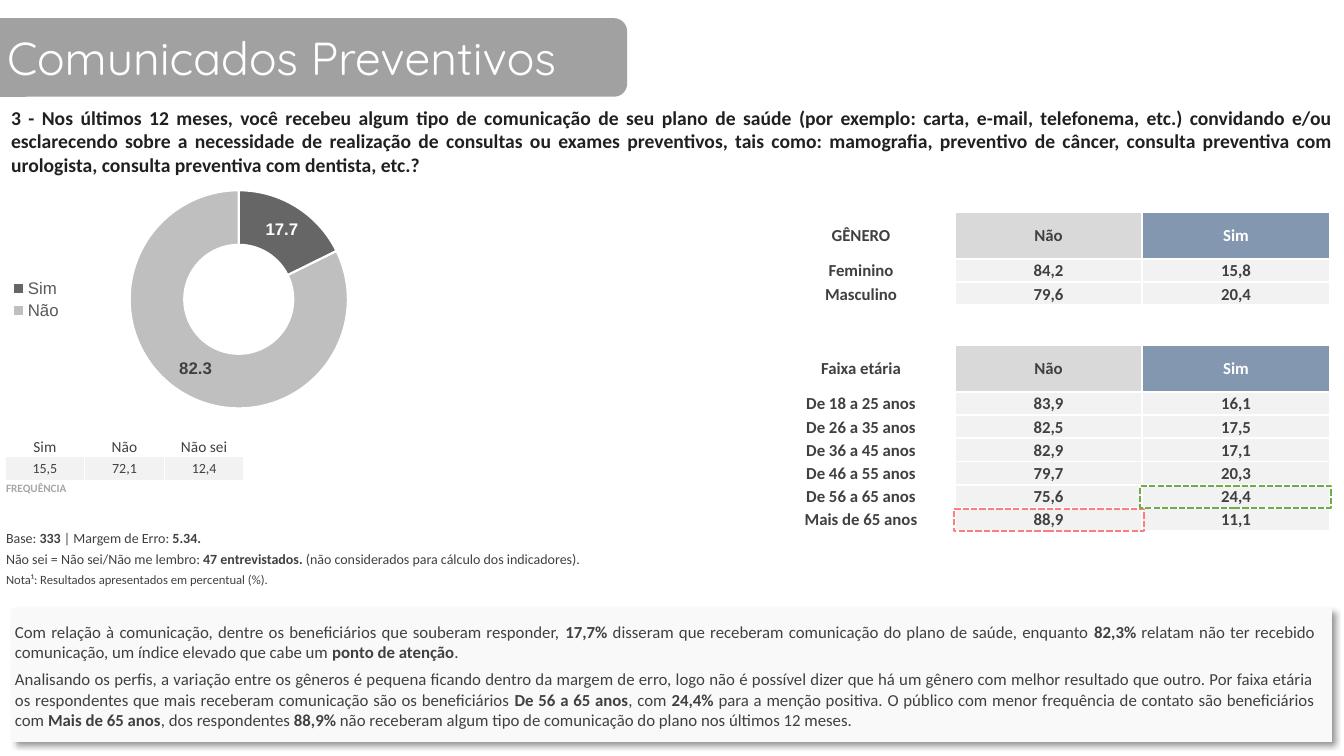
from lxml import etree
from pptx import Presentation
from pptx.chart.data import CategoryChartData
from pptx.dml.color import RGBColor
from pptx.enum.chart import XL_CHART_TYPE, XL_LEGEND_POSITION
from pptx.enum.dml import MSO_LINE
from pptx.enum.shapes import MSO_SHAPE
from pptx.enum.text import MSO_ANCHOR, MSO_AUTO_SIZE, PP_ALIGN
from pptx.oxml import parse_xml
from pptx.oxml.ns import qn
from pptx.util import Pt

LEFT, MID, FULL = PP_ALIGN.LEFT, PP_ALIGN.CENTER, PP_ALIGN.JUSTIFY
TOP, CENTER, BOTTOM = MSO_ANCHOR.TOP, MSO_ANCHOR.MIDDLE, MSO_ANCHOR.BOTTOM
RECT, ROUND = MSO_SHAPE.RECTANGLE, MSO_SHAPE.ROUNDED_RECTANGLE
DASH = MSO_LINE.SQUARE_DOT
RING, KEY_LEFT = XL_CHART_TYPE.DOUGHNUT, XL_LEGEND_POSITION.LEFT
NO_FIT = MSO_AUTO_SIZE.NONE

WHITE = RGBColor(0xFF, 0xFF, 0xFF)
PANEL = RGBColor(0xF9, 0xF9, 0xF9)
PALE = RGBColor(0xF2, 0xF2, 0xF2)
LIGHT = RGBColor(0xD9, 0xD9, 0xD9)
SILVER = RGBColor(0xBF, 0xBF, 0xBF)
FAINT = RGBColor(0xA6, 0xA6, 0xA6)
BANNER = RGBColor(0xA1, 0xA1, 0xA1)
GREY = RGBColor(0x66, 0x66, 0x66)
KEY = RGBColor(0x59, 0x59, 0x59)
TEXT = RGBColor(0x40, 0x40, 0x40)
DARK = RGBColor(0x20, 0x20, 0x20)
BLUE = RGBColor(0x84, 0x97, 0xB0)
RED = RGBColor(0xFF, 0x7C, 0x80)
GREEN = RGBColor(0x70, 0xAD, 0x47)

A = 'xmlns:a="http://schemas.openxmlformats.org/drawingml/2006/main"'
C = 'xmlns:c="http://schemas.openxmlformats.org/drawingml/2006/chart"'
SCALE = 9144  # 100 px to the inch


def px(*vals):
    return [v * SCALE for v in vals]


def style(font, size, color, face, bold=False):
    font.size, font.name, font.bold = Pt(size), face, bold
    font.color.rgb = color


def write(frame, text, size=12, color=TEXT, face="Calibri", bold=False, align=LEFT, gap=0):
    """One paragraph per line; ** switches bold on and off."""
    for i, line in enumerate(text.split("\n")):
        para = frame.add_paragraph() if i else frame.paragraphs[0]
        para.alignment = align
        if i and gap:
            para.space_before = Pt(gap)
        for j, part in enumerate(line.split("**")):
            if part:
                run = para.add_run()
                run.text = part
                style(run.font, size, color, face, bold or j % 2 == 1)


class Page:
    def __init__(self, deck):
        self.slide = deck.slides.add_slide(deck.slide_layouts[5])
        self.shapes = self.slide.shapes

    def title(self, text, *box):
        head = self.shapes.title
        head.left, head.top, head.width, head.height = px(*box)
        head.text_frame.auto_size = NO_FIT
        head.text_frame.vertical_anchor = CENTER
        write(head.text_frame, text, size=33, color=WHITE, face="Quicksand")
        self.shapes._spTree.append(head._element)

    def block(self, *box, kind=RECT, fill=None, line=None, shade=False):
        shape = self.shapes.add_shape(kind, *px(*box))
        shape.shadow.inherit = False
        if fill is None:
            shape.fill.background()
        else:
            shape.fill.solid()
            shape.fill.fore_color.rgb = fill
        if line is None:
            shape.line.fill.background()
        else:
            shape.line.color.rgb = line
            shape.line.width = Pt(1.5)
            shape.line.dash_style = DASH
        if shade:
            list_ = shape._element.spPr.find(qn("a:effectLst"))
            list_.append(parse_xml(
                f'<a:outerShdw {A} blurRad="50800" dist="38100" dir="2700000" algn="tl" '
                'rotWithShape="0"><a:srgbClr val="000000"><a:alpha val="40000"/>'
                '</a:srgbClr></a:outerShdw>'))

    def label(self, text, *box, pad=(10, 5), **look):
        frame = self.shapes.add_textbox(*px(*box)).text_frame
        frame.word_wrap = True
        frame.margin_left = frame.margin_right = pad[0] * SCALE
        frame.margin_top = frame.margin_bottom = pad[1] * SCALE
        write(frame, text, **look)

    def table(self, left, top, cols, highs, rows, look, edge=0):
        """look(row, col) gives a cell's fill, anchor and text format."""
        table = self.shapes.add_table(
            len(rows), len(cols), *px(left, top, sum(cols), sum(highs))).table
        table.first_row = table.horz_banding = False
        for col, wide in zip(table.columns, cols):
            col.width = wide * SCALE
        for r, row in enumerate(rows):
            table.rows[r].height = highs[r] * SCALE
            for c in range(len(cols)):
                fill, anchor, form = look(r, c)
                self.cell(table.cell(r, c), fill, anchor, edge)
                if c < len(row):
                    write(table.cell(r, c).text_frame, row[c], **form)
            if len(row) < len(cols):
                table.cell(r, 0).merge(table.cell(r, len(cols) - 1))

    def cell(self, cell, fill, anchor, edge):
        cell.margin_left = cell.margin_right = cell.margin_top = SCALE
        cell.margin_bottom = 0
        cell.vertical_anchor = anchor
        props = cell._tc.get_or_add_tcPr()
        for side in ("lnL", "lnR", "lnT", "lnB"):
            line = etree.SubElement(props, qn("a:" + side), w=str(int(edge * 12700)))
            paint = etree.SubElement(line, qn("a:solidFill" if edge else "a:noFill"))
            if edge:
                etree.SubElement(paint, qn("a:srgbClr"), val=str(WHITE))
        if fill is None:
            cell.fill.background()
        else:
            cell.fill.solid()
            cell.fill.fore_color.rgb = fill

    def ring(self, names, vals, fills, inks, *box):
        data = CategoryChartData(number_format="0.0")
        data.categories = names
        data.add_series("Series 1", vals)
        chart = self.shapes.add_chart(RING, *px(*box), data).chart
        style(chart.font, 10, TEXT, "Arial")
        chart.has_title = False
        chart.has_legend = True
        chart.legend.position = KEY_LEFT
        chart.legend.include_in_layout = False
        style(chart.legend.font, 12, KEY, "Arial")
        plot = chart.plots[0]
        plot.vary_by_categories = True
        plot.has_data_labels = True
        tags = plot.data_labels
        tags.show_value, tags.show_percentage = True, False
        tags.number_format, tags.number_format_is_linked = "0.0", False
        style(tags.font, 12, WHITE, "Arial", True)
        for i, (fill, ink) in enumerate(zip(fills, inks)):
            point = plot.series[0].points[i]
            point.format.fill.solid()
            point.format.fill.fore_color.rgb = fill
            point.format.line.color.rgb = WHITE
            point.format.line.width = Pt(1.5)
            style(point.data_label.font, 12, ink, "Arial", True)
        # Fixed place of the ring inside the chart
        area = chart._chartSpace.chart.plotArea
        for old in area.findall(qn("c:layout")):
            area.remove(old)
        spots = "".join(f'<c:{k} val="{v}"/>' for k, v in (
            ("layoutTarget", "inner"), ("xMode", "edge"), ("yMode", "edge"),
            ("x", 0.31), ("y", 0.06), ("w", 0.53), ("h", 0.88)))
        area.insert(0, parse_xml(
            f'<c:layout {C}><c:manualLayout>{spots}</c:manualLayout></c:layout>'))


def note_look(r, c):
    return None, TOP, dict(size=9 if r == 2 else 10)


def freq_look(r, c):
    if r == 2:
        return None, TOP, dict(size=8, color=FAINT, bold=True)
    return (PALE if r else None), (CENTER if r else BOTTOM), dict(size=10 if r else 11, align=MID)


def group_look(r, c):
    head = r in (0, 4)
    fill = None if c == 0 or r == 3 else (LIGHT, BLUE)[c - 1] if head else PALE
    return fill, CENTER, dict(bold=True, align=MID, color=WHITE if head and c == 2 else TEXT)


def main():
    deck = Presentation()
    deck.slide_width, deck.slide_height = px(1333, 750)
    page = Page(deck)

    # Banner and question
    page.block(-27, 18, 649, 78, kind=ROUND, fill=BANNER)
    page.title("Comunicados Preventivos", -3, 18, 614, 78)
    page.label("3 - Nos últimos 12 meses, você recebeu algum tipo de comunicação de seu plano de saúde (por exemplo: carta, e-mail, telefonema, etc.) convidando e/ou esclarecendo sobre a necessidade de realização de consultas ou exames preventivos, tais como: mamografia, preventivo de câncer, consulta preventiva com urologista, consulta preventiva com dentista, etc.?",
               0, 99, 1333, 82, pad=(11, 6), size=14, color=DARK, bold=True, align=FULL)

    # Sample notes
    page.table(5, 525, [654], [21] * 3, [
        ["Base: **333** | Margem de Erro: **5.34.**"],
        ["Não sei = Não sei/Não me lembro: **47 entrevistados.** (não considerados para cálculo dos indicadores)."],
        ["Nota¹: Resultados apresentados em percentual (%)."]], note_look)

    # Findings
    page.block(12, 603, 1309, 133, fill=PANEL, shade=True)
    page.label("Com relação à comunicação, dentre os beneficiários que souberam responder, **17,7%** disseram que receberam comunicação do plano de saúde, enquanto **82,3%** relatam não ter recebido comunicação, um índice elevado que cabe um **ponto de atenção**.\n"
               "Analisando os perfis, a variação entre os gêneros é pequena ficando dentro da margem de erro, logo não é possível dizer que há um gênero com melhor resultado que outro. Por faixa etária os respondentes que mais receberam comunicação são os beneficiários **De 56 a 65 anos**, com **24,4% **para a menção positiva. O público com menor frequência de contato são beneficiários com **Mais de 65 anos**, dos respondentes **88,9% **não receberam algum tipo de comunicação do plano nos últimos 12 meses.",
               5, 612, 1309, 118, align=FULL, gap=5)

    # Frequency
    page.table(5, 433, [79] * 3, [20, 24, 24], [
        ["Sim", "Não", "Não sei"], ["15,5", "72,1", "12,4"], ["FREQUÊNCIA"]],
        freq_look, edge=1)

    # Results by gender and age
    page.table(761, 210, [186] * 3, [47, 23, 23, 39, 47] + [23] * 6, [
        ["GÊNERO", "Não", "Sim"],
        ["Feminino", "84,2", "15,8"],
        ["Masculino", "79,6", "20,4"],
        [],
        ["Faixa etária", "Não", "Sim"],
        ["De 18 a 25 anos", "83,9", "16,1"],
        ["De 26 a 35 anos", "82,5", "17,5"],
        ["De 36 a 45 anos", "82,9", "17,1"],
        ["De 46 a 55 anos", "79,7", "20,3"],
        ["De 56 a 65 anos", "75,6", "24,4"],
        ["Mais de 65 anos", "88,9", "11,1"]], group_look, edge=1.5)
    page.block(946, 505, 189, 22, line=RED)
    page.block(1131, 482, 189, 22, line=GREEN)

    # Overall share
    page.ring(["Sim", "Não"], [17.7, 82.3], [GREY, SILVER], [WHITE, TEXT], 0, 174, 412, 246)
    deck.save("out.pptx")


if __name__ == "__main__":
    main()
